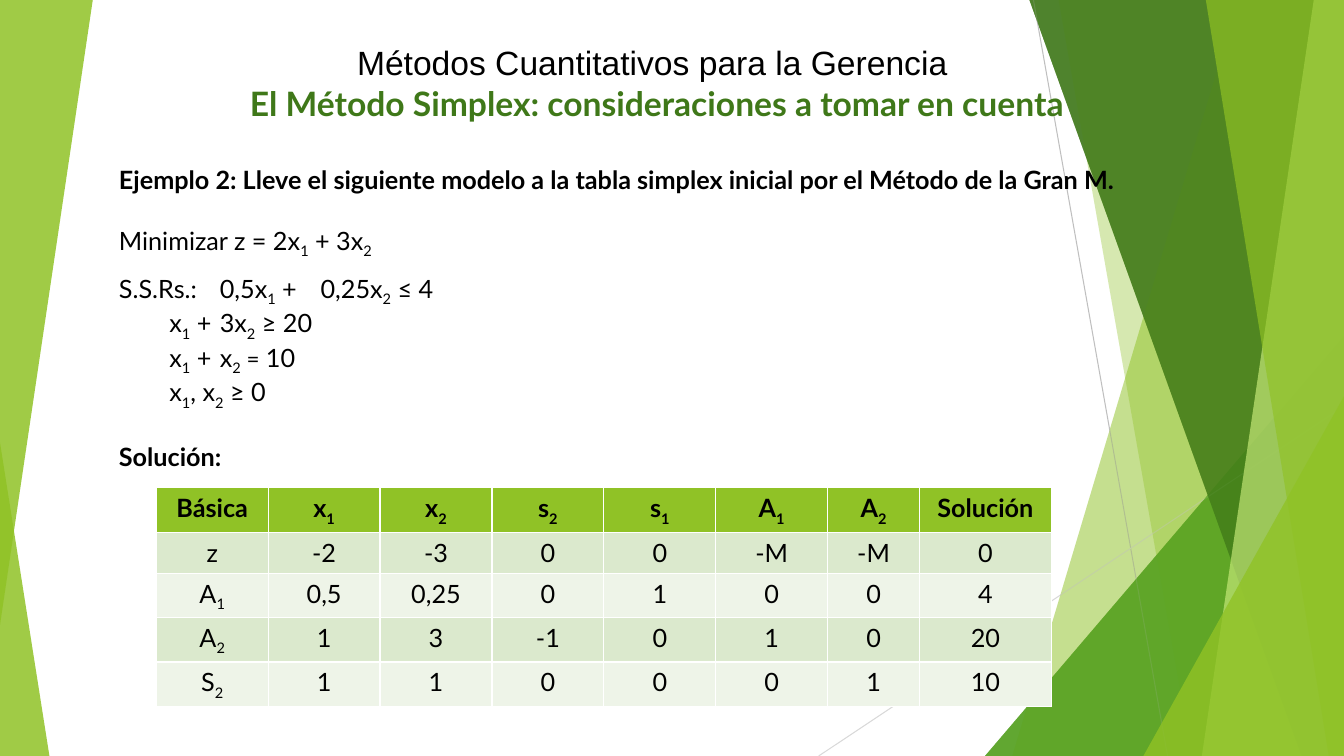
from lxml.etree import SubElement
from pptx import Presentation
from pptx.dml.color import RGBColor
from pptx.enum.shapes import MSO_CONNECTOR, MSO_SHAPE
from pptx.enum.text import MSO_ANCHOR, MSO_AUTO_SIZE, PP_ALIGN
from pptx.oxml.ns import qn
from pptx.util import Inches, Pt

GREEN = "90C226"
DARK_GREEN = "3F7819"
FACETS_BACK = [(1.05, 3.29, GREEN, 30), (2.83, 1.51, GREEN, 20)]
FACETS_FRONT = [
    (3.12, 0.42, DARK_GREEN, 70),
    (0.3, 1.41, "C0E474", 70),
    (1.37, 0.15, GREEN, 65),
]
CONSTRAINTS = [
    ("S.S.Rs.:\t0,5x_1 +\t0,25x_2", " ≤", 18, " 4", (1.34, 2.23)),
    ("\tx_1 +\t3x_2", " ≥", 18, " 20", (1.59, 2.45)),
    ("\tx_1 +\tx_2", " =", 16, " 10", (1.59, 2.59)),
    ("\tx_1, x_2", " ≥", 18, " 0", (1.4,)),
]
SIMPLEX_ROWS = [
    ["Básica", "x_1", "x_2", "s_2", "s_1", "A_1", "A_2", "Solución"],
    ["z", "-2", "-3", "0", "0", "-M", "-M", "0"],
    ["A_1", "0,5", "0,25", "0", "1", "0", "0", "4"],
    ["A_2", "1", "3", "-1", "0", "1", "0", "20"],
    ["S_2", "1", "1", "0", "0", "0", "1", "10"],
]
COLUMN_WIDTHS = [1.11] * 6 + [0.91, 1.31]


def color(value):
    return RGBColor.from_string(value)


def write(paragraph, text, size=18, font="Lato", fill="000000", bold=False):
    first, *rest = text.split("_")
    pieces = [(first, False)]
    for part in rest:
        pieces += [(part[0], True), (part[1:], False)]
    for piece, subscript in pieces:
        if not piece:
            continue
        run = paragraph.add_run()
        run.text = piece
        run.font.size = Pt(size)
        run.font.name = font
        run.font.bold = bold
        run.font.color.rgb = color(fill)
        if subscript:
            run.font._element.set("baseline", "-25000")


def add_line(frame, alignment, before=0, tabs=()):
    paragraph = frame.add_paragraph() if frame.text else frame.paragraphs[0]
    paragraph.alignment = alignment
    paragraph.space_before = Pt(before)
    properties = paragraph._p.get_or_add_pPr()
    properties.set("marL", "0")
    properties.set("indent", "0")
    SubElement(properties, qn("a:buNone"))
    if tabs:
        tab_list = SubElement(properties, qn("a:tabLst"))
        for position in tabs:
            SubElement(tab_list, qn("a:tab"), pos=str(Inches(position)), algn="l")
    return paragraph


def place(placeholder, left, top, width, height):
    placeholder.left, placeholder.top = Inches(left), Inches(top)
    placeholder.width, placeholder.height = Inches(width), Inches(height)
    placeholder.element.getparent().append(placeholder.element)
    frame = placeholder.text_frame
    frame.word_wrap = True
    frame.auto_size = MSO_AUTO_SIZE.NONE
    frame.vertical_anchor = MSO_ANCHOR.TOP
    return frame


def paint(shape, fill, opacity):
    shape.shadow.inherit = False
    shape.fill.solid()
    shape.fill.fore_color.rgb = color(fill)
    shape.line.fill.background()
    tint = shape.element.spPr.find(".//" + qn("a:srgbClr"))
    SubElement(tint, qn("a:alpha"), val=str(opacity * 1000))


def add_triangle(slide, left, top, width, height, apex, fill, opacity, rotation=0):
    triangle = slide.shapes.add_shape(
        MSO_SHAPE.ISOSCELES_TRIANGLE, Inches(left), Inches(top), Inches(width), Inches(height)
    )
    triangle.adjustments[0] = apex
    triangle.rotation = rotation
    paint(triangle, fill, opacity)


def add_facets(slide, facets, right, top, bottom):
    for top_reach, bottom_reach, fill, opacity in facets:
        builder = slide.shapes.build_freeform(Inches(right - top_reach), Inches(top))
        corners = [(right, top), (right, bottom), (right - bottom_reach, bottom)]
        builder.add_line_segments([(Inches(x), Inches(y)) for x, y in corners], close=True)
        paint(builder.convert_to_shape(), fill, opacity)


def add_right_facets(slide, left, top, width, height):
    right, bottom = left + width, top + height
    add_facets(slide, FACETS_BACK, right, top, bottom)
    add_triangle(slide, left, bottom - 4.17, width, 4.17, 1, "54A021", 72)
    add_facets(slide, FACETS_FRONT, right, top, bottom)
    add_triangle(slide, right - 1.99, bottom - 3.57, 1.99, 3.57, 1, GREEN, 80)


def add_rays(slide, left, top, width, height):
    right, bottom = left + width, top + height
    rays = [
        (left + 2.13, top, left + 3.46, bottom, "BFBFBF"),
        (right, top + 4.03, left, bottom, "D9D9D9"),
    ]
    for start_x, start_y, end_x, end_y, stroke in rays:
        ray = slide.shapes.add_connector(
            MSO_CONNECTOR.STRAIGHT, Inches(start_x), Inches(start_y), Inches(end_x), Inches(end_y)
        )
        ray.line.color.rgb = color(stroke)
        ray.line.width = Pt(0.75)
        SubElement(ray.element.spPr, qn("a:effectLst"))


def add_background(slide, left, top, width, height):
    right, bottom = left + width, top + height
    facet_box = (right - 3.56, top, 3.56, height)
    add_right_facets(slide, *facet_box)
    add_triangle(slide, left, bottom - 3.11, 0.49, 3.11, 0, GREEN, 85)
    add_rays(slide, right - 5.21, top, 5.21, height)
    add_right_facets(slide, *facet_box)
    add_triangle(slide, left, top, 0.92, 6.2, 1, GREEN, 85, rotation=180)


def add_heading(slide, left, top, width, height):
    frame = place(slide.shapes.title, left, top, width, height)
    course = add_line(frame, PP_ALIGN.CENTER)
    write(course, "Métodos Cuantitativos para la Gerencia ", size=24, font="Arial")
    topic = add_line(frame, PP_ALIGN.CENTER)
    write(topic, "El Método Simplex: consideraciones a tomar en cuenta",
          size=24, fill=DARK_GREEN, bold=True)


def add_model(slide, left, top, width, height):
    frame = place(slide.placeholders[1], left, top, width, height)
    example = add_line(frame, PP_ALIGN.JUSTIFY)
    write(example, "Ejemplo 2: Lleve el siguiente modelo a la tabla simplex inicial "
          "por el Método de la Gran M.", bold=True)
    write(add_line(frame, PP_ALIGN.JUSTIFY, before=22), "Minimizar z = 2x_1 + 3x_2")
    for index, (expression, sign, sign_size, limit, tabs) in enumerate(CONSTRAINTS):
        constraint = add_line(frame, PP_ALIGN.JUSTIFY, 0 if index else 9.8, tabs)
        write(constraint, expression)
        write(constraint, sign, size=sign_size)
        write(constraint, limit)
    write(add_line(frame, PP_ALIGN.JUSTIFY, before=22), "Solución:", bold=True)


def add_simplex_table(slide, left, top, width, height):
    table = slide.shapes.add_table(
        len(SIMPLEX_ROWS), len(COLUMN_WIDTHS),
        Inches(left), Inches(top), Inches(width), Inches(height)
    ).table
    for column, column_width in zip(table.columns, COLUMN_WIDTHS):
        column.width = Inches(column_width)
    for row_index, values in enumerate(SIMPLEX_ROWS):
        header = row_index == 0
        band = GREEN if header else ("EEF4E8", "DBE9CD")[row_index % 2]
        for column_index, value in enumerate(values):
            cell = table.cell(row_index, column_index)
            cell.fill.solid()
            cell.fill.fore_color.rgb = color(band)
            write(add_line(cell.text_frame, PP_ALIGN.CENTER), value, bold=header)


def main():
    presentation = Presentation()
    presentation.slide_width = Inches(13.33)
    presentation.slide_height = Inches(7.5)
    slide = presentation.slides.add_slide(presentation.slide_layouts[1])
    add_background(slide, 0, 0, 13.33, 7.5)
    add_heading(slide, 1.88, 0.37, 9.27, 0.91)
    add_model(slide, 1.08, 1.58, 11.42, 2.96)
    add_simplex_table(slide, 1.55, 4.84, 8.89, 2.03)
    presentation.save("out.pptx")


if __name__ == "__main__":
    main()
